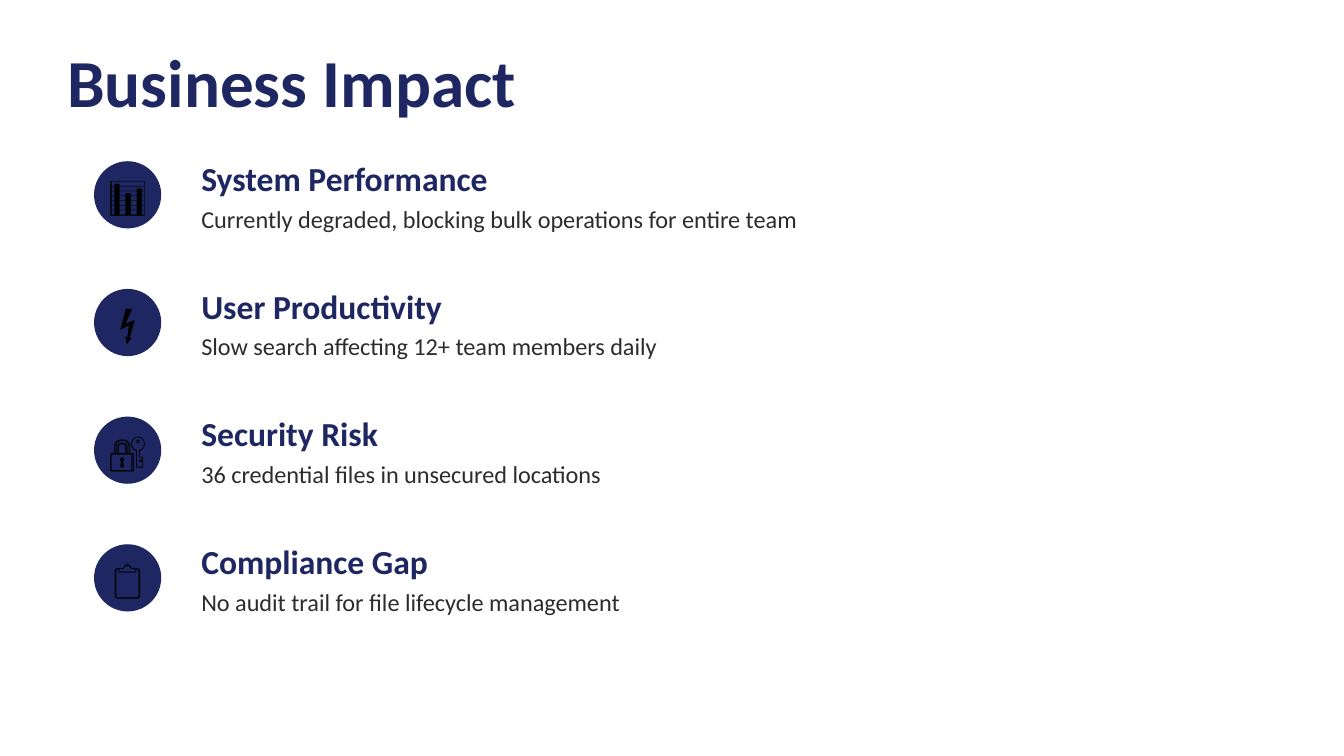
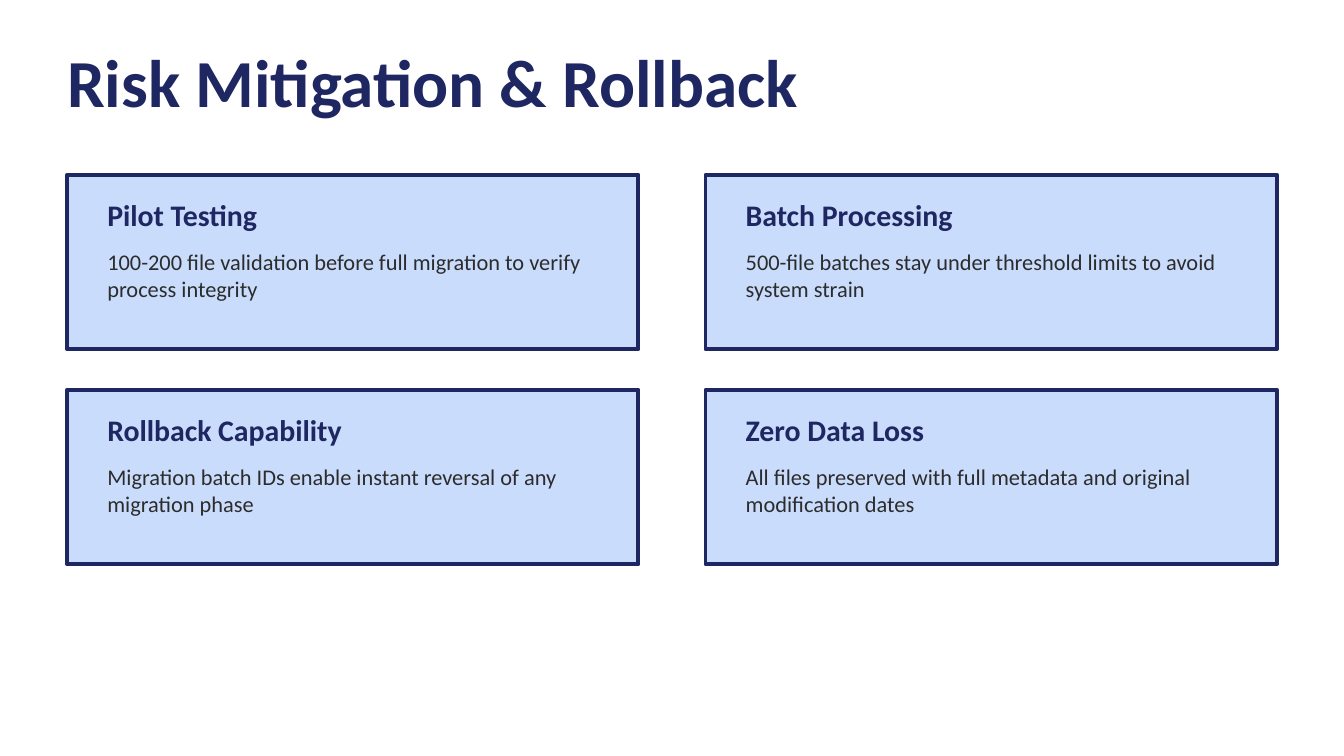
from pptx import Presentation
from pptx import util as u
from pptx.dml.color import RGBColor
from pptx.enum import shapes, text

NAVY, ICE, INK, BLACK = "1E2761", "CADCFC", "2C2C2C", "000000"
CELL = u.Inches(0.05)
TITLE_AREA = (10, 6, 180, 12)
TITLE = {"size": u.Pt(36), "bold": True, "color": NAVY}
ICON = {"size": u.Pt(20), "bold": False, "color": BLACK}
IMPACT_HEADING = {"size": u.Pt(18), "bold": True, "color": NAVY}
IMPACT_DETAIL = {"size": u.Pt(13), "bold": False, "color": INK}
CARD_HEADING = {"size": u.Pt(16), "bold": True, "color": NAVY}
CARD_DETAIL = {"size": u.Pt(12), "bold": False, "color": INK}

presentation = Presentation()
presentation.slide_width = u.Inches(10)
presentation.slide_height = presentation.slide_width * 9 // 16


def write(shape, words, style, anchor=text.MSO_ANCHOR.MIDDLE, align=text.PP_ALIGN.LEFT):
    frame = shape.text_frame
    frame.word_wrap = True
    frame.auto_size = text.MSO_AUTO_SIZE.NONE
    frame.vertical_anchor = anchor
    frame.text = words
    paragraph = frame.paragraphs[0]
    paragraph.alignment = align
    font = paragraph.runs[0].font
    font.name = "Calibri"
    for name, value in style.items():
        if name == "color":
            font.color.rgb = RGBColor.from_string(value)
        else:
            setattr(font, name, value)


def grid(*cells):
    return [CELL * cell for cell in cells]


slides = []
for heading in ("Business Impact", "Risk Mitigation & Rollback"):
    slide = presentation.slides.add_slide(presentation.slide_layouts[5])
    title = slide.shapes.title
    title.left, title.top, title.width, title.height = grid(*TITLE_AREA)
    for side in ("left", "top", "right", "bottom"):
        setattr(title.text_frame, f"margin_{side}", 0)
    write(title, heading, TITLE)
    slides.append(slide)
impact_slide, risk_slide = slides

impacts = [
    ("📊", "System Performance", "Currently degraded, blocking bulk operations for entire team"),
    ("⚡", "User Productivity", "Slow search affecting 12+ team members daily"),
    ("🔐", "Security Risk", "36 credential files in unsecured locations"),
    ("📋", "Compliance Gap", "No audit trail for file lifecycle management"),
]
for index, (icon, heading, detail) in enumerate(impacts):
    row = 24 + 19 * index
    badge = grid(14, row, 10, 10)
    circle = impact_slide.shapes.add_shape(shapes.MSO_SHAPE.OVAL, *badge)
    circle.shadow.inherit = False
    circle.fill.solid()
    circle.fill.fore_color.rgb = RGBColor.from_string(NAVY)
    circle.line.fill.background()
    write(impact_slide.shapes.add_textbox(*badge), icon, ICON, align=text.PP_ALIGN.CENTER)
    for offset, words, style in ((0, heading, IMPACT_HEADING), (6, detail, IMPACT_DETAIL)):
        write(impact_slide.shapes.add_textbox(*grid(28, row + offset, 156, 5)), words, style)

cards = [
    ("Pilot Testing", "100-200 file validation before full migration to verify process integrity"),
    ("Batch Processing", "500-file batches stay under threshold limits to avoid system strain"),
    ("Rollback Capability", "Migration batch IDs enable instant reversal of any migration phase"),
    ("Zero Data Loss", "All files preserved with full metadata and original modification dates"),
]
for index, (heading, detail) in enumerate(cards):
    column = 10 + 95 * (index % 2)
    row = 26 + 32 * (index // 2)
    card = risk_slide.shapes.add_shape(shapes.MSO_SHAPE.RECTANGLE, *grid(column, row, 85, 26))
    card.shadow.inherit = False
    card.fill.solid()
    card.fill.fore_color.rgb = RGBColor.from_string(ICE)
    card.line.color.rgb = RGBColor.from_string(NAVY)
    card.line.width = u.Pt(2)
    heading_box = risk_slide.shapes.add_textbox(*grid(column + 4, row + 3, 77, 6))
    write(heading_box, heading, CARD_HEADING)
    detail_box = risk_slide.shapes.add_textbox(*grid(column + 4, row + 10, 77, 13))
    write(detail_box, detail, CARD_DETAIL, anchor=text.MSO_ANCHOR.TOP)

presentation.save("out.pptx")
